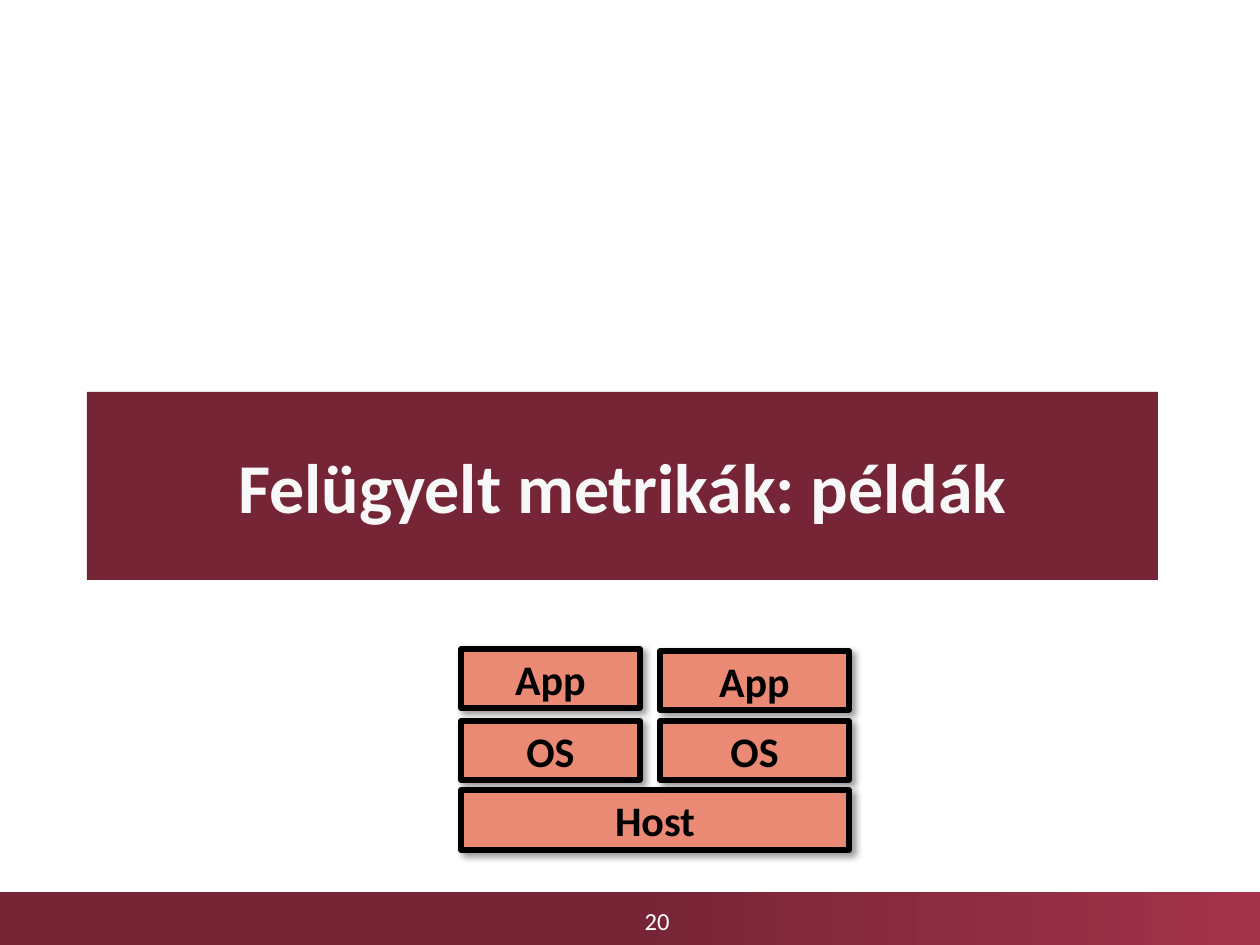
from copy import deepcopy

from lxml.etree import SubElement
from pptx import Presentation
from pptx.dml.color import RGBColor
from pptx.enum.shapes import MSO_SHAPE as Preset
from pptx.enum.text import MSO_ANCHOR as Anchor, PP_ALIGN as Align
from pptx.oxml.ns import qn
from pptx.util import Inches, Pt

PX_PER_INCH = 126
FONT = "Calibri"
COLORS = {
    "wine": "762536",
    "wine_light": "A3334B",
    "salmon": "EA8A75",
    "outline": "000000",
    "title": "F8F8F8",
    "white": "FFFFFF",
}


def px(length):
    return Inches(length / PX_PER_INCH)


def rgb(name):
    return RGBColor.from_string(COLORS[name])


class SlideBuilder:
    def __init__(self, slide):
        self.slide = slide

    def rect(self, left, top, width, height, fill=None):
        """Add a rectangle without outline or shadow."""
        shape = self.slide.shapes.add_shape(
            Preset.RECTANGLE, px(left), px(top), px(width), px(height))
        shape.shadow.inherit = False
        shape.line.fill.background()
        if fill:
            shape.fill.solid()
            shape.fill.fore_color.rgb = rgb(fill)
        return shape

    def gradient_bar(self, box, stops):
        """Add a left-to-right gradient of three (position, color) stops."""
        bar = self.rect(*box)
        bar.fill.gradient()
        bar.fill.gradient_angle = 0
        first = bar.element.spPr.find(".//" + qn("a:gs"))
        first.addnext(deepcopy(first))
        for stop, (position, color) in zip(bar.fill.gradient_stops, stops):
            stop.position = position
            stop.color.rgb = rgb(color)

    def add_text(self, shape, text, size, color, bold=False):
        frame = shape.text_frame
        frame.word_wrap = True
        frame.vertical_anchor = Anchor.MIDDLE
        paragraph = frame.paragraphs[0]
        paragraph.alignment = Align.CENTER
        run = paragraph.add_run()
        run.text = text
        run.font.name = FONT
        run.font.size = Pt(size)
        run.font.bold = bold
        run.font.color.rgb = rgb(color)

    def label(self, box, text, size, color):
        area = self.slide.shapes.add_textbox(*map(px, box))
        self.add_text(area, text, size, color)

    def banner(self, box, text):
        self.add_text(self.rect(*box, "wine"), text, 40, "title", True)

    def layer(self, box, text):
        """Add an outlined, shadowed block of the system stack."""
        block = self.rect(*box, "salmon")
        block.line.color.rgb = rgb("outline")
        block.line.width = Pt(3)
        effects = block.element.spPr.find(qn("a:effectLst"))
        shadow = SubElement(
            effects, qn("a:outerShdw"), blurRad=str(Pt(4)), dist=str(Pt(3)),
            dir=str(45 * 60000), algn="tl", rotWithShape="0")
        tint = SubElement(shadow, qn("a:srgbClr"), val=COLORS["outline"])
        SubElement(tint, qn("a:alpha"), val="40000")
        self.add_text(block, text, 24, "outline", True)


def main():
    deck = Presentation()
    deck.slide_width, deck.slide_height = px(1260), px(945)
    builder = SlideBuilder(deck.slides.add_slide(deck.slide_layouts[6]))

    builder.gradient_bar(
        (0, 892, 1260, 53),
        [(0, "wine"), (0.5, "wine"), (1, "wine_light")])
    builder.label((452, 896, 410, 49), "20", 14, "white")
    builder.banner((87, 392, 1071, 188), "Felügyelt metrikák: példák")

    builder.layer((461, 790, 388, 60), "Host")
    machines = [(461, 179, 649), (660, 189, 651)]
    for left, width, app_top in machines:
        builder.layer((left, 721, width, 59), "OS")
        builder.layer((left, app_top, width, 59), "App")

    deck.save("out.pptx")


if __name__ == "__main__":
    main()
